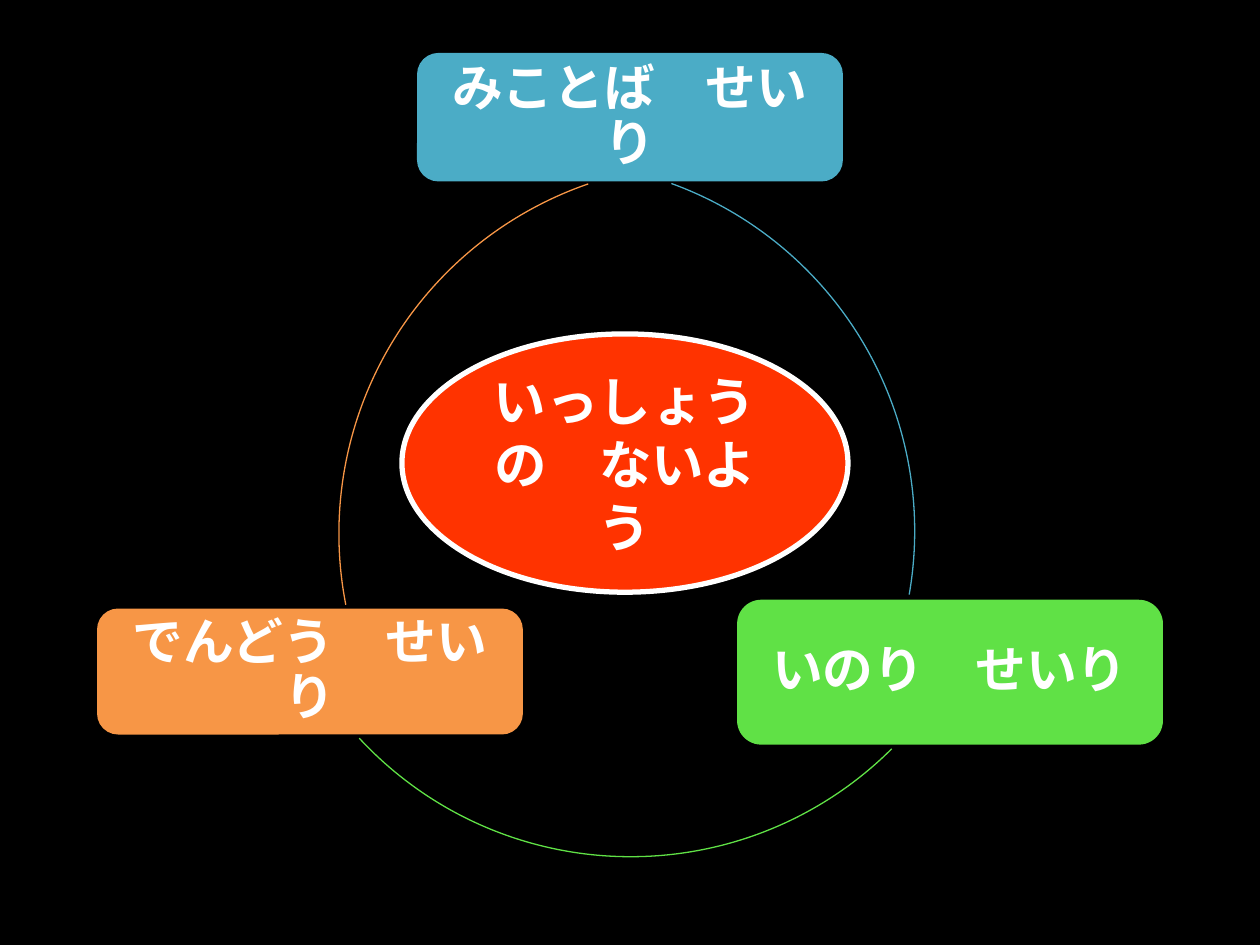
import pptx
import pptx.dml.color
import pptx.enum.shapes
import pptx.enum.text
import pptx.oxml
import pptx.oxml.ns
import pptx.util
from pptx.util import Inches

COLORS = {
    "background": "000000",
    "text": "FFFFFF",
    "word": "4BACC6",
    "prayer": "60E146",
    "evangelism": "F79646",
    "center": "FF3300",
}
JAPANESE_FONT = "Noto Sans CJK KR"
ARC_SIZE = 5.87
SHAPES = pptx.enum.shapes.MSO_SHAPE

TOPICS = [
    ("みことば　せいり", "word", (3.31, 0.42, 3.38, 1.02)),
    ("いのり　せいり", "prayer", (5.85, 4.76, 3.38, 1.15)),
    ("でんどう　せいり", "evangelism", (0.77, 4.83, 3.38, 1.0)),
]
ARCS = [
    ("word", (1.39, 1.28), (290, 9.9)),
    ("prayer", (2.07, 0.93), (45.1, 137.2)),
    ("evangelism", (2.69, 1.3), (168.9, 251)),
]


def rgb(name):
    """Return the named colour."""
    return pptx.dml.color.RGBColor.from_string(COLORS[name])


def add_plain_shape(slide, kind, box):
    """Add a preset shape without shadow in a box given in inches."""
    shape = slide.shapes.add_shape(kind, *map(Inches, box))
    shape.shadow.inherit = False
    return shape


def set_label(shape, text, size, font_name):
    """Write centred bold text in a shape and return its paragraph."""
    frame = shape.text_frame
    frame.word_wrap = True
    frame.vertical_anchor = pptx.enum.text.MSO_ANCHOR.MIDDLE
    paragraph = frame.paragraphs[0]
    paragraph.text = text
    paragraph.alignment = pptx.enum.text.PP_ALIGN.CENTER
    font = paragraph.runs[0].font
    font.size = pptx.util.Pt(size)
    font.bold = True
    font.name = font_name
    font.color.rgb = rgb("text")
    properties = paragraph.runs[0]._r.get_or_add_rPr()
    east_asian = pptx.oxml.parse_xml(
        f'<a:ea {pptx.oxml.ns.nsdecls("a")} typeface="{JAPANESE_FONT}"/>'
    )
    properties.find(pptx.oxml.ns.qn("a:latin")).addnext(east_asian)
    return paragraph


def add_topic(slide, text, color, box):
    """Add one rounded topic box of the cycle."""
    shape = add_plain_shape(slide, SHAPES.ROUNDED_RECTANGLE, box)
    shape.fill.solid()
    shape.fill.fore_color.rgb = rgb(color)
    shape.line.fill.background()
    frame = shape.text_frame
    frame.margin_left = frame.margin_right = Inches(0.17)
    frame.margin_top = frame.margin_bottom = Inches(0.17)
    paragraph = set_label(shape, text, 29, JAPANESE_FONT)
    paragraph.line_spacing = 0.9
    paragraph.space_after = pptx.util.Pt(10)


def add_arc(slide, color, corner, angles):
    """Add an arc running clockwise between two angles in degrees."""
    shape = add_plain_shape(slide, SHAPES.ARC, (*corner, ARC_SIZE, ARC_SIZE))
    for index, angle in enumerate(angles):
        shape.adjustments[index] = angle * 0.6
    shape.fill.background()
    shape.line.color.rgb = rgb(color)
    shape.line.width = pptx.util.Pt(0.75)


def add_center(slide, box):
    """Add the outlined ellipse that names the theme."""
    shape = add_plain_shape(slide, SHAPES.OVAL, box)
    shape.fill.solid()
    shape.fill.fore_color.rgb = rgb("center")
    shape.line.color.rgb = rgb("text")
    shape.line.width = pptx.util.Pt(3)
    set_label(shape, "いっしょうの　ないよう", 30, "Arial")


def main():
    """Build the cycle slide and save it."""
    presentation = pptx.Presentation()
    presentation.slide_width = Inches(10)
    presentation.slide_height = Inches(7.5)
    slide = presentation.slides.add_slide(presentation.slide_layouts[6])
    slide.background.fill.solid()
    slide.background.fill.fore_color.rgb = rgb("background")
    for topic, arc in zip(TOPICS, ARCS):
        add_topic(slide, *topic)
        add_arc(slide, *arc)
    add_center(slide, (3.19, 2.65, 3.54, 2.05))
    presentation.save("out.pptx")


if __name__ == "__main__":
    main()
